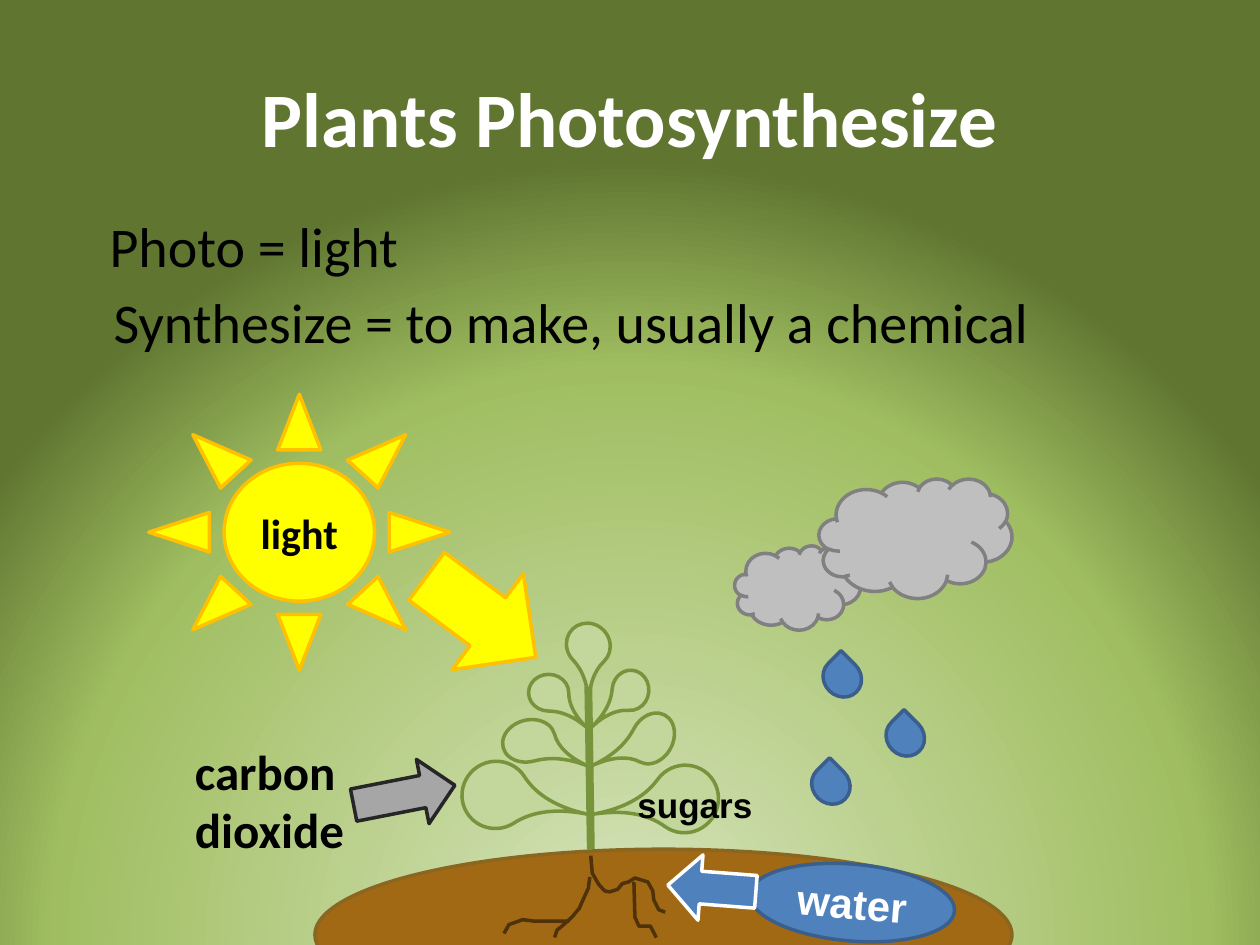
from lxml import etree
from pptx import Presentation
from pptx.dml.color import RGBColor
from pptx.enum.shapes import MSO_CONNECTOR, MSO_SHAPE
from pptx.enum.text import MSO_ANCHOR, PP_ALIGN
from pptx.oxml import parse_xml
from pptx.oxml.ns import nsdecls, qn
from pptx.util import Cm, Pt

CENTER, LEFT = PP_ALIGN.CENTER, PP_ALIGN.LEFT
MIDDLE, TOP = MSO_ANCHOR.MIDDLE, MSO_ANCHOR.TOP
SUN, CLOUD, OVAL = MSO_SHAPE.SUN, MSO_SHAPE.CLOUD, MSO_SHAPE.OVAL
TEAR, ARROW = MSO_SHAPE.TEAR, MSO_SHAPE.RIGHT_ARROW
STRAIGHT = MSO_CONNECTOR.STRAIGHT

BLACK = RGBColor(0x00, 0x00, 0x00)
WHITE = RGBColor(0xFF, 0xFF, 0xFF)
YELLOW = RGBColor(0xFF, 0xFF, 0x00)
GOLD = RGBColor(0xFF, 0xC0, 0x00)
CLOUD_GRAY = RGBColor(0xBF, 0xBF, 0xBF)
CLOUD_EDGE = RGBColor(0x80, 0x80, 0x80)
BLUE = RGBColor(0x4F, 0x81, 0xBD)
BLUE_EDGE = RGBColor(0x3A, 0x5F, 0x8C)
LEAF = RGBColor(0xC3, 0xD6, 0x9B)
STEM = RGBColor(0x77, 0x93, 0x3C)
SOIL = RGBColor(0xA1, 0x69, 0x14)
SOIL_EDGE = RGBColor(0x8B, 0x66, 0x21)
ROOT = RGBColor(0x4F, 0x31, 0x0A)
GAS_GRAY = RGBColor(0xA6, 0xA6, 0xA6)
GAS_EDGE = RGBColor(0x26, 0x26, 0x26)
GLOW = RGBColor(0xD7, 0xE4, 0xBD)
MEADOW = RGBColor(0xA0, 0xBE, 0x61)
FOREST = RGBColor(0x5F, 0x75, 0x30)

DROPS = [(16.61, 13.26), (17.88, 14.45), (16.38, 15.42)]
BACK_LEAVES = [
    ((13.13, 15.42, 1.35, 1.37), 216),
    ((12.34, 13.51, 0.74, 0.81), 184.2),
    ((10.69, 13.56, 0.74, 0.81), 90),
    ((10.24, 14.4, 0.84, 1.07), 75),
]
FRONT_LEAVES = [
    ((11.43, 12.55, 0.86, 0.91), 136.3),
    ((9.32, 15.34, 1.35, 1.37), 57.3),
    ((12.73, 14.35, 0.84, 1.07), 207.6),
]
ROOTS = [
    [(11.91, 17.25), (11.94, 17.6), (12.07, 17.83), (12.19, 17.96), (12.29, 17.98),
     (12.45, 17.93), (12.55, 17.81), (12.67, 17.78), (12.8, 17.7), (13.06, 17.78),
     (13.16, 17.96), (13.18, 18.14), (13.28, 18.34), (13.41, 18.39)],
    [(12.78, 17.78), (12.8, 18.49), (12.88, 18.67), (13.11, 18.67), (13.18, 18.8),
     (13.23, 18.9)],
    [(11.89, 17.68), (11.86, 17.91), (11.79, 18.06), (11.71, 18.24), (11.68, 18.31),
     (11.53, 18.49), (11.33, 18.67), (11.23, 18.75), (11.18, 18.9)],
    [(11.48, 18.57), (11.33, 18.57), (10.77, 18.57), (10.54, 18.54), (10.26, 18.64),
     (10.16, 18.82)],
]


def set_background(s):
    """Fill the background with a circular gradient centred below the slide."""
    s.background.fill.gradient()
    grad = s.background._cSld.find(".//" + qn("a:gradFill"))
    for child in list(grad):
        grad.remove(child)
    stops = "".join(
        f'<a:gs pos="{pos}"><a:srgbClr val="{color}"/></a:gs>'
        for pos, color in ((0, GLOW), (73000, MEADOW), (100000, FOREST))
    )
    grad.append(parse_xml(f"<a:gsLst {nsdecls('a')}>{stops}</a:gsLst>"))
    grad.append(parse_xml(
        f'<a:path {nsdecls("a")} path="circle">'
        '<a:fillToRect l="50000" t="130000" r="50000" b="-30000"/></a:path>'
    ))


def place(sp, box):
    """Set the position and size of a shape in centimetres."""
    sp.left, sp.top, sp.width, sp.height = map(Cm, box)


def write(sp, text, size, font, color, bold=True, align=CENTER, anchor=MIDDLE):
    """Put one formatted paragraph into a shape."""
    tf = sp.text_frame
    tf.word_wrap = True
    tf.vertical_anchor = anchor
    tf.text = text
    p = tf.paragraphs[0]
    p.alignment = align
    p.font.size, p.font.name, p.font.bold = Pt(size), font, bold
    p.font.color.rgb = color
    return tf


def add_label(s, box, text, size, font, bold=True, inset=0.13, indent=0):
    """Add a left-aligned black text box."""
    sp = s.shapes.add_textbox(*map(Cm, box))
    tf = write(sp, text, size, font, BLACK, bold, LEFT, TOP)
    tf.margin_top = tf.margin_bottom = Cm(inset)
    if indent:
        tf.paragraphs[0]._p.get_or_add_pPr().set("marL", str(Cm(indent)))


def add_figure(s, kind, box, fill, edge, rotation=0):
    """Add a filled and outlined preset shape."""
    sp = s.shapes.add_shape(kind, *map(Cm, box))
    sp.shadow.inherit = False
    sp.fill.solid()
    sp.fill.fore_color.rgb = fill
    sp.line.color.rgb = edge
    sp.line.width = Pt(2)
    sp.rotation = rotation
    return sp


def add_leaves(s, leaves):
    """Add long-tipped teardrop leaves."""
    for box, rotation in leaves:
        add_figure(s, TEAR, box, LEAF, STEM, rotation).adjustments[0] = 2


def add_stem(s, start, end):
    """Add the stem of the plant as a thick line."""
    line = s.shapes.add_connector(STRAIGHT, *map(Cm, start + end))
    line.line.color.rgb = STEM
    line.line.width = Pt(4.5)
    etree.SubElement(line._element.spPr, qn("a:effectLst"))


def add_root(s, points):
    """Add one root as an open outline."""
    first, *rest = [(Cm(x), Cm(y)) for x, y in points]
    builder = s.shapes.build_freeform(*first)
    builder.add_line_segments(rest, close=False)
    sp = builder.convert_to_shape()
    sp.shadow.inherit = False
    sp.fill.background()
    sp.line.color.rgb = ROOT
    sp.line.width = Pt(2)


def main():
    """Build the photosynthesis slide."""
    prs = Presentation()
    prs.slide_width, prs.slide_height = Cm(25.4), Cm(19.05)
    s = prs.slides.add_slide(prs.slide_layouts[5])
    set_background(s)

    title = s.shapes.title
    place(title, (1.27, 0.76, 22.86, 3.18))
    write(title, "Plants Photosynthesize", 44, "Calibri", WHITE)
    add_label(s, (1.96, 4.01, 10.16, 1.8), "Photo = light", 32, "Calibri", False, 0.25)
    add_label(s, (1.96, 5.54, 20.35, 1.7), "Synthesize = to make, usually a chemical",
              32, "Calibri", False, 0.25, 0.08)

    sun = add_figure(s, SUN, (3, 7.95, 6.07, 5.56), YELLOW, GOLD)
    write(sun, "light", 24, "Calibri", BLACK)
    for box in ((14.81, 11, 2.54, 1.7), (16.51, 9.65, 3.89, 2.41)):
        add_figure(s, CLOUD, box, CLOUD_GRAY, CLOUD_EDGE)
    for x, y in DROPS:
        add_figure(s, TEAR, (x, y, 0.74, 0.81), BLUE, BLUE_EDGE, 315)

    add_leaves(s, BACK_LEAVES)
    add_stem(s, (11.86, 13.84), (11.91, 17.12))
    add_leaves(s, FRONT_LEAVES)
    add_figure(s, OVAL, (6.35, 17.12, 14.05, 3.45), SOIL, SOIL_EDGE)
    for points in ROOTS:
        add_root(s, points)

    water = add_figure(s, OVAL, (15.11, 17.42, 4.14, 1.55), BLUE, BLUE_EDGE, 4.8)
    write(water, "water", 24, "Arial", WHITE)
    add_figure(s, ARROW, (13.46, 17.25, 1.78, 1.32), BLUE, WHITE, 184.4)
    add_figure(s, ARROW, (8.33, 11.23, 2.74, 2.41), YELLOW, GOLD, 36.6)
    add_figure(s, ARROW, (7.11, 15.37, 2.08, 1.32), GAS_GRAY, GAS_EDGE, 348.9)
    add_label(s, (3.68, 14.81, 3.63, 2.64), "carbon dioxide", 28, "Calibri")
    add_label(s, (12.6, 15.67, 3.07, 1.12), "sugars", 20, "Arial")
    prs.save("out.pptx")


if __name__ == "__main__":
    main()
